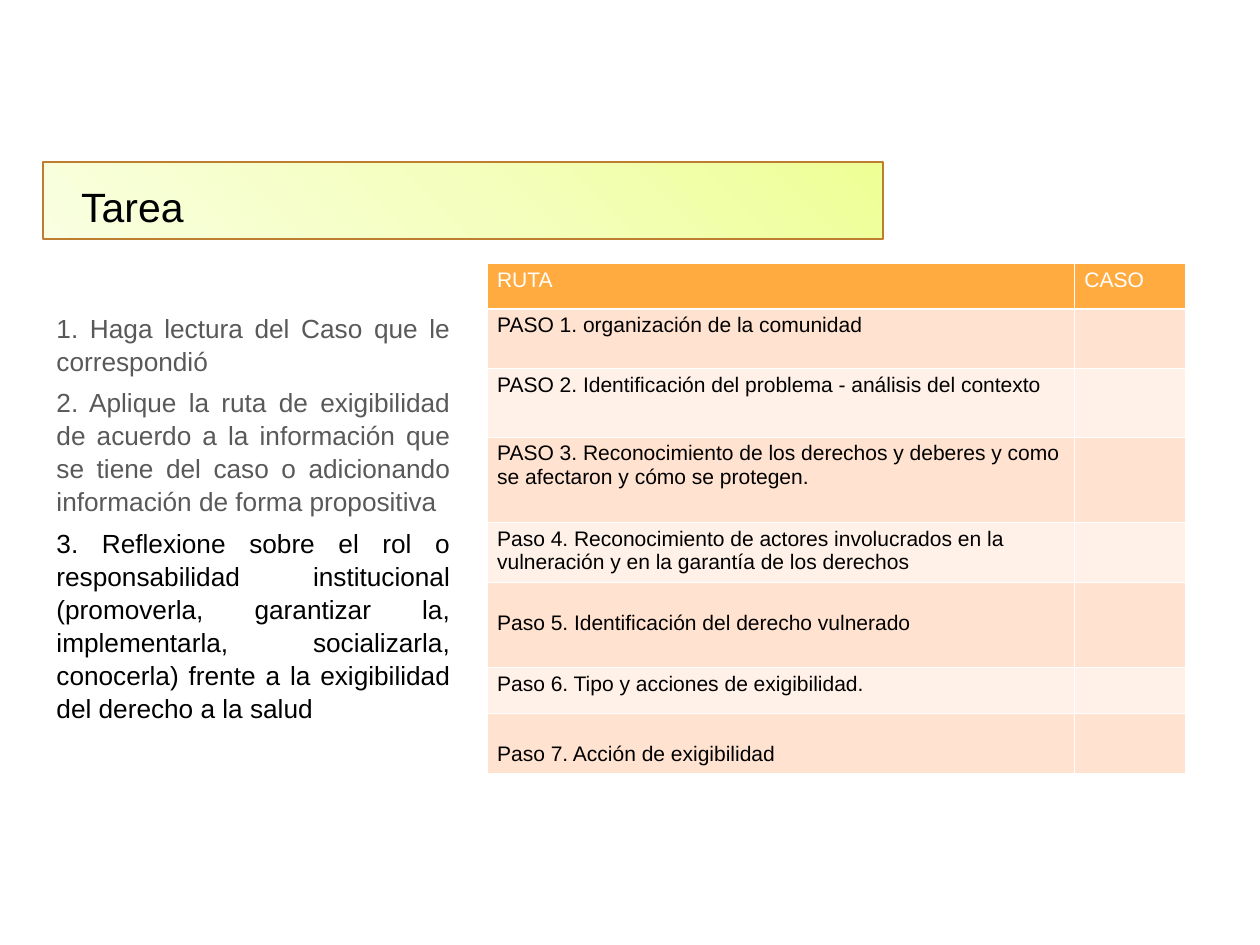
from lxml import etree
from pptx import Presentation
from pptx import util as u
from pptx.dml.color import RGBColor
from pptx.enum import shapes, text
from pptx.oxml import parse_xml
from pptx.oxml.ns import nsdecls, qn

PX = 9144
BLACK, GREY, WHITE = "000000", "595959", "FFFFFF"
HEADER, BANDS = "FFAB40", ("FFF1E8", "FFE2CF")
GLOW = ((0, "EEFF96"), (50, "F4FFBF"), (100, "F9FFE0"))
TASKS = (
    ("1. Haga lectura del Caso que le correspondió", GREY),
    ("2. Aplique la ruta de exigibilidad de acuerdo a la información que se tiene "
     "del caso o adicionando información de forma propositiva", GREY),
    ("3. Reflexione sobre el rol o responsabilidad institucional (promoverla, "
     "garantizar la, implementarla, socializarla, conocerla) frente a la "
     "exigibilidad del derecho a la salud", BLACK),
)
LOW, HIGH = 42, 7
ROUTE = (
    ("RUTA", 66, HIGH),
    ("PASO 1. organización de la comunidad", 87, HIGH),
    ("PASO 2. Identificación del problema - análisis del contexto", 99, HIGH),
    ("PASO 3. Reconocimiento de los derechos y deberes y como se afectaron "
     "y cómo se protegen.", 124, HIGH),
    ("Paso 4. Reconocimiento de actores involucrados en la vulneración "
     "y en la garantía de los derechos", 87, HIGH),
    ("Paso 5. Identificación del derecho vulnerado", 124, LOW),
    ("Paso 6. Tipo y acciones de exigibilidad.", 66, HIGH),
    ("Paso 7. Acción de exigibilidad", 87, LOW),
)


def px(*lengths):
    """Turn px lengths into EMU."""
    return [u.Emu(n * PX) for n in lengths]


def rgb(color):
    """Turn a hex string into a colour."""
    return RGBColor.from_string(color)


def style(p, size, color):
    """Format the runs of a paragraph."""
    for r in p.runs:
        r.font.name, r.font.size, r.font.bold = "Arial", u.Pt(size), False
        r.font.color.rgb = rgb(color)


def set_margins(box, left, top, right, bottom):
    """Set the four insets of a text frame or cell."""
    box.margin_left, box.margin_top, box.margin_right, box.margin_bottom = px(
        left, top, right, bottom)


def add_text(s, at, inset, size, items, justified=False):
    """Add a text box with one paragraph per item of text and colour."""
    tf = s.shapes.add_textbox(*px(*at)).text_frame
    tf.word_wrap = True
    set_margins(tf, *[inset] * 4)
    tf.text = "\n".join(words for words, _ in items)
    for p, (_, color) in zip(tf.paragraphs, items):
        style(p, size, color)
        if justified:
            p.alignment = text.PP_ALIGN.JUSTIFY
            p.line_spacing, p.space_after = 1.05, u.Pt(9)


def add_banner(s, at):
    """Add the title band with a gradient spreading from its top right corner."""
    sp = s.shapes.add_shape(shapes.MSO_SHAPE.RECTANGLE, *px(*at))
    sp.shadow.inherit = False
    stops = "".join(f'<a:gs pos="{pos * 1000}"><a:srgbClr val="{color}"/></a:gs>'
                    for pos, color in GLOW)
    grad = parse_xml(
        f'<a:gradFill {nsdecls("a")}><a:gsLst>{stops}</a:gsLst><a:path path="circle">'
        '<a:fillToRect l="100000" b="100000"/></a:path></a:gradFill>')
    sp.element.spPr.find(qn("a:prstGeom")).addnext(grad)
    sp.line.color.rgb, sp.line.width = rgb("BD7F2F"), u.Pt(2)


def add_borders(cell, bottom):
    """Draw white borders around a cell, with a chosen bottom width."""
    tcPr = cell._tc.get_or_add_tcPr()
    for i, (side, width) in enumerate(zip("LRTB", (1, 1, 1, bottom))):
        ln = etree.Element(qn(f"a:ln{side}"), w=str(u.Pt(width)))
        fill = etree.SubElement(ln, qn("a:solidFill"))
        etree.SubElement(fill, qn("a:srgbClr"), val=WHITE)
        tcPr.insert(i, ln)


def add_route_table(s, left, top, widths):
    """Add the table of route steps with an empty column for the case."""
    height = sum(h for _, h, _ in ROUTE)
    table = s.shapes.add_table(len(ROUTE), len(widths),
                               *px(left, top, sum(widths), height)).table
    for col, width in zip(table.columns, px(*widths)):
        col.width = width
    for i, (step, row_height, inset) in enumerate(ROUTE):
        table.rows[i].height = px(row_height)[0]
        for cell, words in zip(table.rows[i].cells, (step, "" if i else "CASO")):
            cell.text = words
            set_margins(cell, 14, inset if words else HIGH, 14, 7)
            style(cell.text_frame.paragraphs[0], 22, BLACK if i else WHITE)
            cell.fill.solid()
            cell.fill.fore_color.rgb = rgb(BANDS[i % 2] if i else HEADER)
            add_borders(cell, 1 if i else 3)


def main():
    """Build the slide and save it."""
    prs = Presentation()
    prs.slide_width, prs.slide_height = px(1830, 1373)
    s = prs.slides.add_slide(prs.slide_layouts[6])
    add_text(s, (62, 431, 611, 669), 20, 27.4, TASKS, justified=True)
    add_banner(s, (62, 236, 1220, 111))
    add_text(s, (90, 236, 1705, 115), 28, 42.8, [("Tarea", BLACK)])
    add_route_table(s, 708, 383, (853, 161))
    prs.save("out.pptx")


if __name__ == "__main__":
    main()
